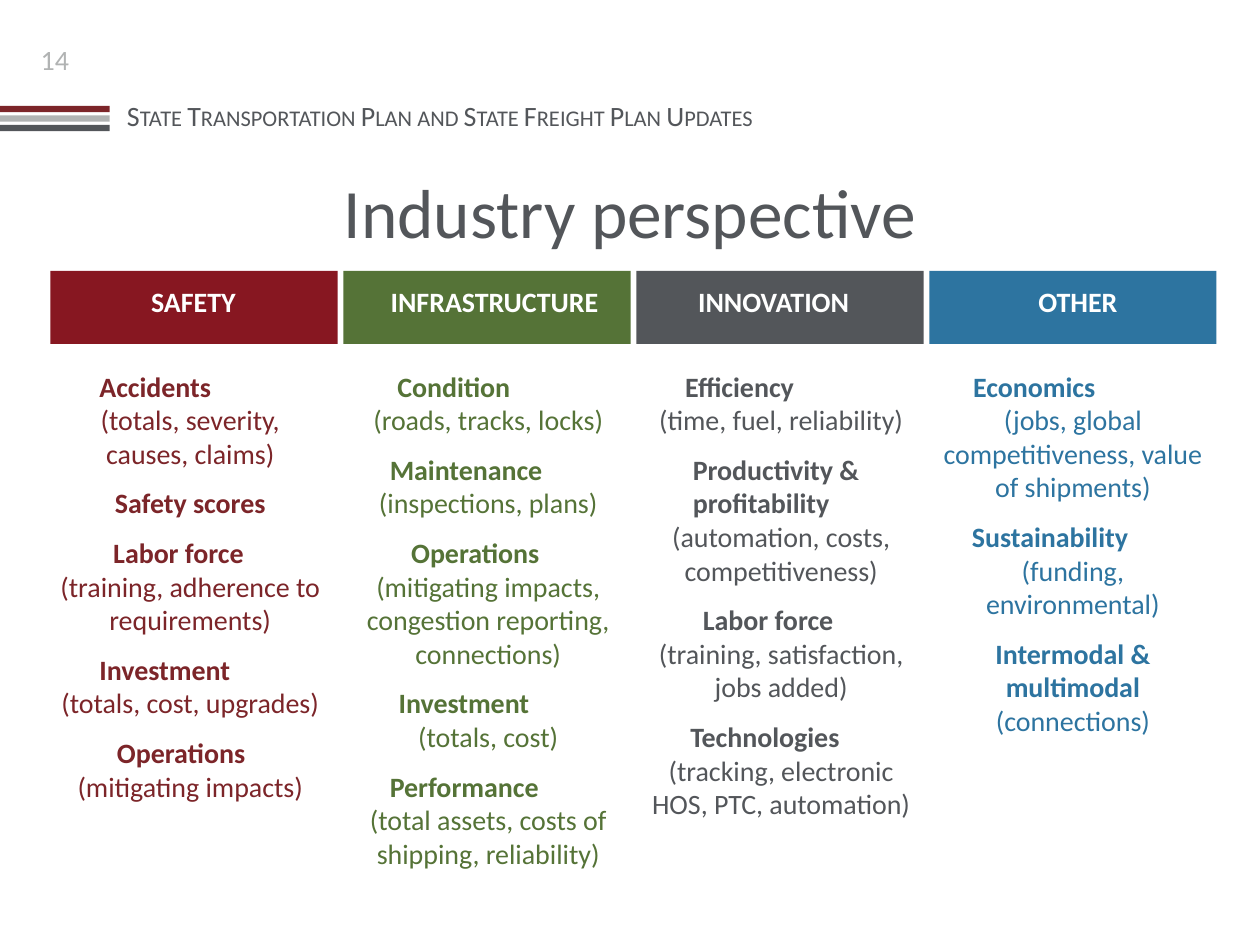
from pptx import Presentation
from pptx.dml.color import RGBColor
from pptx.enum.shapes import MSO_SHAPE
from pptx.enum.text import MSO_ANCHOR, PP_ALIGN
from pptx.util import Inches, Pt

THEME = {
    "font": "Calibri", "size": 16, "big": 39.6, "gap": 9.2,
    "red": "7C2529", "wine": "871721", "green": "557337", "dark": "53565A",
    "blue": "2D74A0", "grey": "B1B3B3", "white": "FFFFFF",
}

HEAD = "State Transportation Plan and State Freight Plan Updates"
TITLE = "Industry perspective"
PAGE = "14"
BARS = ["red", "grey", "dark"]

# Each topic: heading, its left indent (None = centred), detail
COLS = [
    {"name": "SAFETY", "fill": "wine", "ink": "red",
     "label": (0.42, 2.23), "shift": -0.03, "topics": [
         ("Accidents", 0.32, "(totals, severity,\vcauses, claims)"),
         ("Safety scores", None, None),
         ("Labor force", 0.43, "(training, adherence to requirements)"),
         ("Investment", 0.32, "(totals, cost, upgrades)"),
         ("Operations", 0.46, "(mitigating impacts)")]},
    {"name": "INFRASTRUCTURE", "fill": "green", "ink": "green",
     "label": (2.84, 2.17), "shift": 0.01, "topics": [
         ("Condition", 0.32, "(roads, tracks, locks)"),
         ("Maintenance", 0.26, "(inspections, plans)"),
         ("Operations", 0.43,
          "(mitigating impacts, congestion reporting, connections)"),
         ("Investment", 0.33, "(totals, cost)"),
         ("Performance", 0.26,
          "(total assets, costs of shipping, reliability)")]},
    {"name": "INNOVATION", "fill": "dark", "ink": "dark",
     "label": (5.02, 2.24), "shift": 0.01, "topics": [
         ("Efficiency", 0.28, "(time, fuel, reliability)"),
         ("Productivity & profitability", 0.34,
          "(automation, costs, competitiveness)"),
         ("Labor force", 0.42, "(training, satisfaction, jobs added)"),
         ("Technologies", 0.32, "(tracking, electronic HOS, PTC, automation)")]},
    {"name": "OTHER", "fill": "blue", "ink": "blue",
     "label": (7.42, 2.27), "shift": 0, "topics": [
         ("Economics", 0.25,
          "(jobs, global competitiveness, value of shipments)"),
         ("Sustainability", 0.24, "(funding, environmental)"),
         ("Intermodal & multimodal", None, "(connections)")]},
]

LEFT, STEP, WIDE = 0.4, 2.325, 2.28
HEAD_TOP, HEAD_TALL = 2.15, 0.58
BODY_TOP, BODY_TALL = 2.88, 4.62
BAR_TOP, BAR_STEP, BAR_WIDE, BAR_TALL = 0.84, 0.075, 0.87, 0.05

deck = Presentation()
deck.slide_width, deck.slide_height = Inches(10), Inches(7.5)
slide = deck.slides.add_slide(deck.slide_layouts[6])


def block(x, y, w, h, fill):
    shape = slide.shapes.add_shape(
        MSO_SHAPE.RECTANGLE, Inches(x), Inches(y), Inches(w), Inches(h))
    shape.shadow.inherit = False
    shape.fill.solid()
    shape.fill.fore_color.rgb = RGBColor.from_string(THEME[fill])
    shape.line.fill.background()


def frame(x, y, w, h, anchor=MSO_ANCHOR.TOP):
    box = slide.shapes.add_textbox(Inches(x), Inches(y), Inches(w), Inches(h))
    box.text_frame.word_wrap = True
    box.text_frame.vertical_anchor = anchor
    return box.text_frame


def write(para, text, ink="dark", size="size", bold=False,
          align=PP_ALIGN.CENTER, indent=0, before=0, caps=False):
    """Fill a paragraph; a vertical tab in the text breaks the line."""
    para.alignment = align
    para.space_before = Pt(before)
    if indent:
        props = para._p.get_or_add_pPr()
        props.set("marL", str(Inches(indent)))
        props.set("indent", "0")
    for i, part in enumerate(text.split("\v")):
        if i:
            para.add_line_break()
        run = para.add_run()
        run.text = part
        font = run.font
        font.name, font.size, font.bold = THEME["font"], Pt(THEME[size]), bold
        font.color.rgb = RGBColor.from_string(THEME[ink])
        if caps:
            font._element.set("cap", "small")


def topics(body, rows, ink):
    for i, (name, indent, detail) in enumerate(rows):
        para = body.add_paragraph() if i else body.paragraphs[0]
        write(para, name, ink=ink, bold=True, indent=indent or 0,
              align=PP_ALIGN.LEFT if indent else PP_ALIGN.CENTER,
              before=THEME["gap"] if i else 0)
        if detail:
            write(body.add_paragraph(), detail, ink=ink)


write(frame(0.91, 0.73, 5.26, 0.37).paragraphs[0], HEAD,
      align=PP_ALIGN.LEFT, caps=True)
for i, fill in enumerate(BARS):
    block(0, BAR_TOP + i * BAR_STEP, BAR_WIDE, BAR_TALL, fill)
write(frame(0, 0.29, BAR_WIDE, 0.37).paragraphs[0], PAGE, ink="grey")

for i, col in enumerate(COLS):
    x = LEFT + i * STEP
    topics(frame(x + col["shift"], BODY_TOP, WIDE, BODY_TALL),
           col["topics"], col["ink"])
    block(x, HEAD_TOP, WIDE, HEAD_TALL, col["fill"])
    start, wide = col["label"]
    write(frame(start, 2.21, wide, 0.37).paragraphs[0], col["name"],
          ink="white", bold=True)

write(frame(0, 1.33, 10, 0.68, MSO_ANCHOR.MIDDLE).paragraphs[0], TITLE,
      size="big")

deck.save("out.pptx")
